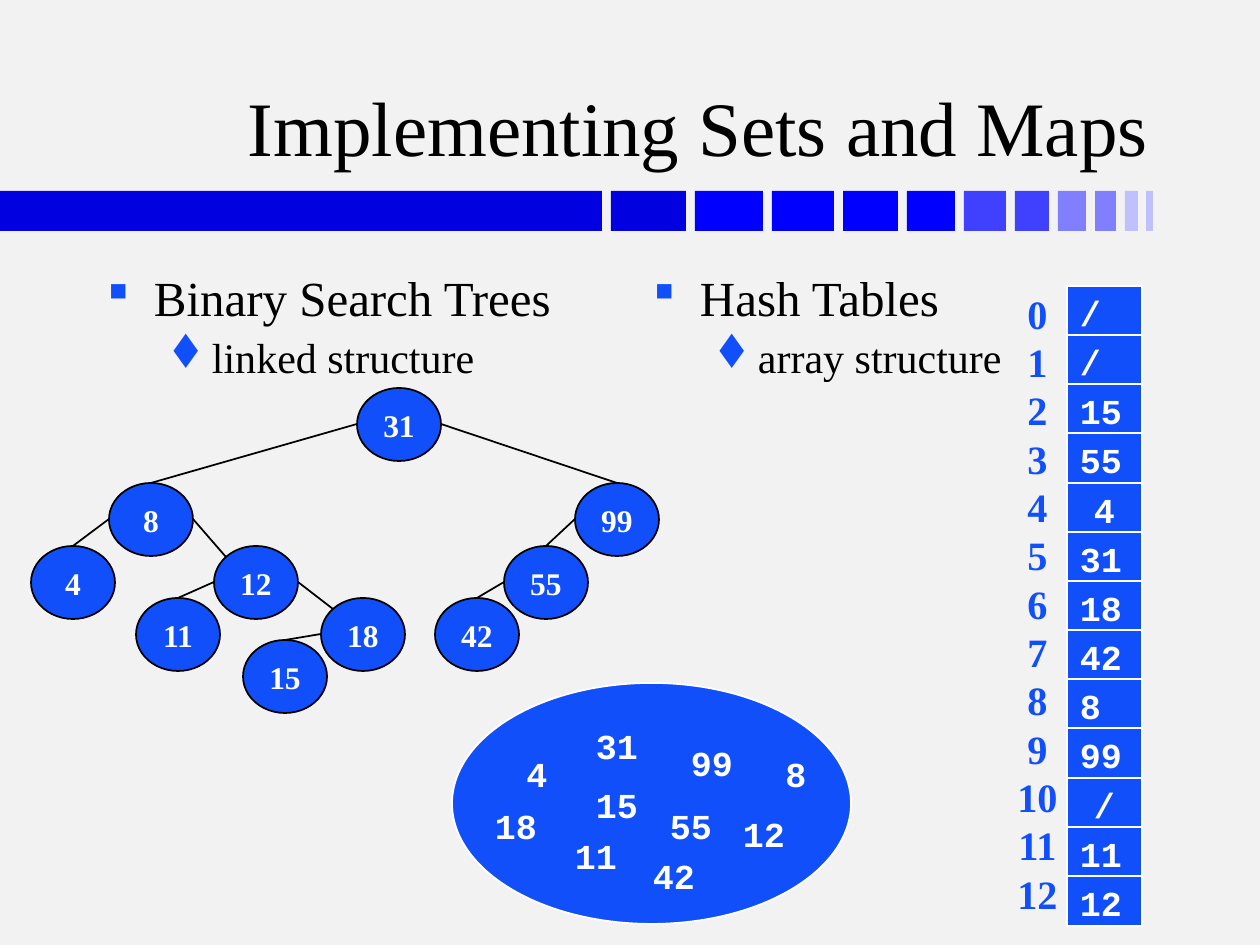
import pptx
import pptx.util
import pptx.dml.color
import pptx.enum.shapes
import pptx.enum.text
import pptx.oxml.ns
from lxml import etree

Shape = pptx.enum.shapes.MSO_SHAPE
Align = pptx.enum.text.PP_ALIGN
Anchor = pptx.enum.text.MSO_ANCHOR
qn = pptx.oxml.ns.qn

SCALE = 914400 / 126
SERIF, MONO = "Times New Roman", "Courier New"
HUES = {
    "back": "F2F2F2", "ink": "000000", "white": "FFFFFF", "blue": "114FFB",
    "navy": "0000E0", "pure": "0000FF", "mid": "4040FF",
    "soft": "8080FF", "pale": "C0C0FF",
}


def emu(px):
    return pptx.util.Emu(round(px * SCALE))


def hue(name):
    return pptx.dml.color.RGBColor.from_string(HUES[name])


class Deck:
    def __init__(self, wide, high):
        self.show = pptx.Presentation()
        self.show.slide_width, self.show.slide_height = emu(wide), emu(high)
        self.slide = self.show.slides.add_slide(self.show.slide_layouts[5])
        self.slide.background.fill.solid()
        self.slide.background.fill.fore_color.rgb = hue("back")

    def frame(self, item, anchor=Anchor.TOP, wrap=True, side=13):
        frame = item.text_frame
        frame.word_wrap = wrap
        frame.vertical_anchor = anchor
        frame.margin_left = frame.margin_right = emu(side)
        frame.margin_top = frame.margin_bottom = emu(6)
        return frame

    def run(self, para, text, size, font=SERIF, color="ink", bold=False, align=Align.LEFT):
        para.alignment = align
        run = para.add_run()
        run.text = text
        run.font.size = pptx.util.Pt(size)
        run.font.name = font
        run.font.bold = bold
        run.font.color.rgb = hue(color)

    def title(self, text, x, y, w, h):
        item = self.slide.shapes.title
        item.left, item.top, item.width, item.height = map(emu, (x, y, w, h))
        frame = self.frame(item, Anchor.BOTTOM)
        self.run(frame.paragraphs[0], text, 44, align=Align.RIGHT)

    def shape(self, kind, x, y, w, h, fill, line=None):
        item = self.slide.shapes.add_shape(kind, *map(emu, (x, y, w, h)))
        item.shadow.inherit = False
        item.fill.solid()
        item.fill.fore_color.rgb = hue(fill)
        if line:
            item.line.color.rgb = hue(line)
            item.line.width = pptx.util.Pt(1)
        else:
            item.line.fill.background()
        return item

    def box(self, x, y, w, h, wrap=True, side=13):
        item = self.slide.shapes.add_textbox(*map(emu, (x, y, w, h)))
        return self.frame(item, wrap=wrap, side=side)

    def bullet(self, para, mark, left, hang):
        props = para._p.get_or_add_pPr()
        props.set("marL", str(emu(left)))
        props.set("indent", str(-emu(hang)))
        tint = etree.SubElement(props, qn("a:buClr"))
        etree.SubElement(tint, qn("a:srgbClr")).set("val", HUES["blue"])
        etree.SubElement(props, qn("a:buFont")).set("typeface", "Wingdings")
        etree.SubElement(props, qn("a:buChar")).set("char", mark)

    def list(self, x, y, w, h, head, point):
        frame = self.box(x, y, w, h)
        rows = ((head, 28, "§", 47, 47, 3.5), (point, 24, "t", 102, 39, 2.5))
        for i, (text, size, mark, left, hang, gap) in enumerate(rows):
            para = frame.add_paragraph() if i else frame.paragraphs[0]
            para.space_before = pptx.util.Pt(gap)
            self.bullet(para, mark, left, hang)
            self.run(para, text, size)

    def node(self, text, x, y, w, h):
        item = self.shape(Shape.OVAL, x, y, w, h, "blue", "ink")
        frame = self.frame(item, Anchor.MIDDLE, False)
        self.run(frame.paragraphs[0], text, 18, SERIF, "white", True, Align.CENTER)

    def line(self, *ends):
        item = self.slide.shapes.add_connector(
            pptx.enum.shapes.MSO_CONNECTOR.STRAIGHT, *map(emu, ends))
        item.line.color.rgb = hue("ink")
        item.line.width = pptx.util.Pt(1)
        etree.SubElement(item._element.spPr, qn("a:effectLst"))

    def cell(self, text, x, y, w, h, align):
        item = self.shape(Shape.RECTANGLE, x, y, w, h, "blue", "white")
        frame = self.frame(item)
        self.run(frame.paragraphs[0], text, 20, MONO, "white", True, align)

    def label(self, text, x, y, w, h):
        frame = self.box(x, y, w, h, False, 0)
        self.run(frame.paragraphs[0], text, 20, MONO, "white", True, Align.CENTER)

    def index(self, count, x, y, w, h):
        frame = self.box(x, y, w, h, False, 0)
        for i in range(count):
            para = frame.add_paragraph() if i else frame.paragraphs[0]
            para.line_spacing = pptx.util.Pt(27.6)
            self.run(para, str(i), 23, SERIF, "blue", True, Align.CENTER)


BARS = [
    (0, 602, "navy"), (611, 75, "navy"), (695, 68, "pure"), (772, 62, "pure"),
    (843, 55, "pure"), (907, 48, "pure"), (964, 42, "mid"), (1015, 34, "mid"),
    (1058, 28, "soft"), (1095, 21, "soft"), (1125, 13, "pale"), (1146, 7, "pale"),
]
NODES = {
    31: (357, 388), 8: (109, 483), 99: (575, 483), 4: (31, 546), 12: (214, 546),
    55: (504, 546), 11: (136, 598), 18: (321, 598), 42: (435, 598), 15: (243, 640),
}
EDGES = [(31, 8), (31, 99), (8, 4), (8, 12), (12, 11), (12, 18), (18, 15), (99, 55), (55, 42)]
CORNER = (12, 18)
SET = [
    (31, 617, 718), (4, 537, 746), (11, 596, 828), (15, 617, 777), (55, 691, 798),
    (99, 712, 735), (12, 764, 806), (8, 796, 746), (42, 674, 848), (18, 516, 798),
]
TABLE = ["/", "/", "15", "55", "4", "31", "18", "42", "8", "99", "/", "11", "12"]
MIDDLE = (4, 10)
NODE_W, NODE_H = 84, 73


def main():
    deck = Deck(1260, 945)
    for x, w, fill in BARS:
        deck.shape(Shape.RECTANGLE, x, 191, w, 40, fill)
    deck.title("Implementing Sets and Maps", 94, 23, 1068, 155)
    deck.list(94, 262, 525, 577, "Binary Search Trees", "linked structure")
    deck.list(640, 262, 525, 577, "Hash Tables", "array structure")

    deck.shape(Shape.OVAL, 452, 683, 399, 241, "blue", "white")
    for value, mid, y in SET:
        deck.label(str(value), mid - 33, y, 66, 54)

    for value, (x, y) in NODES.items():
        deck.node(str(value), x, y, NODE_W, NODE_H)
    for top, low in EDGES:
        (x, y), (a, b) = NODES[top], NODES[low]
        side = x if a < x else x + NODE_W
        end = (a + 12, b + 11) if low in CORNER else (a + NODE_W // 2, b)
        deck.line(side, y + NODE_H // 2, *end)

    for i, text in enumerate(TABLE):
        align = Align.CENTER if i in MIDDLE else Align.LEFT
        deck.cell(text, 1067, 286 + round(i * 49.15), 75, 50, align)
    deck.index(len(TABLE), 1005, 283, 65, 646)
    deck.show.save("out.pptx")


if __name__ == "__main__":
    main()
